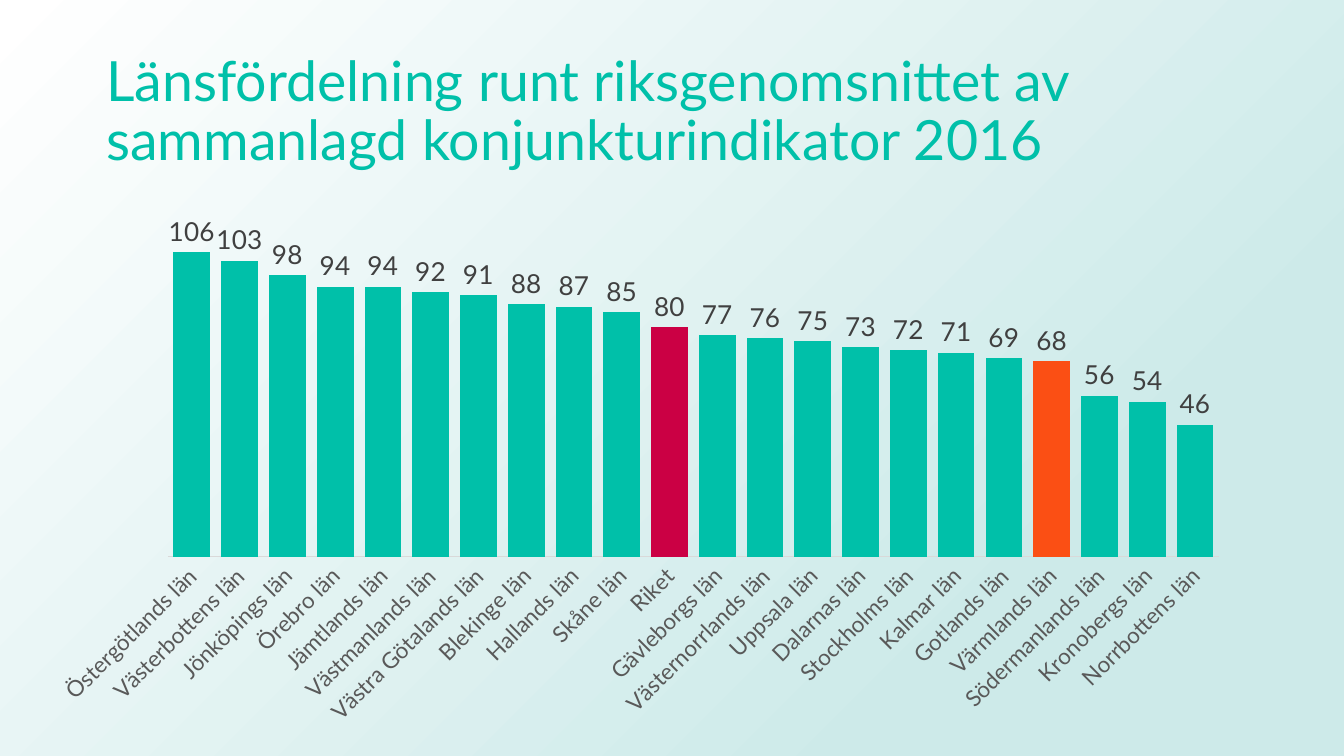
from lxml import etree
from pptx import Presentation, util as u
from pptx.chart import data as cd
from pptx.dml.color import RGBColor
from pptx.enum import chart as ch, shapes, text
from pptx.oxml import parse_xml
from pptx.oxml.ns import nsdecls, qn

SCALE = 914400 / 134.4
COLORS = {"teal": "00C0A9", "red": "CB0044", "orange": "FB4F14", "label": "404040",
          "axis": "595959", "line": "D9D9D9", "mist": "CDEAE9", "white": "FFFFFF"}
COUNTIES = [
    ("Östergötlands län", 106), ("Västerbottens län", 103), ("Jönköpings län", 98),
    ("Örebro län", 94), ("Jämtlands län", 94), ("Västmanlands län", 92),
    ("Västra Götalands län", 91), ("Blekinge län", 88), ("Hallands län", 87),
    ("Skåne län", 85), ("Riket", 80), ("Gävleborgs län", 77),
    ("Västernorrlands län", 76), ("Uppsala län", 75), ("Dalarnas län", 73),
    ("Stockholms län", 72), ("Kalmar län", 71), ("Gotlands län", 69),
    ("Värmlands län", 68), ("Södermanlands län", 56), ("Kronobergs län", 54),
    ("Norrbottens län", 46)]
HIGHLIGHTS = {"Riket": "red", "Värmlands län": "orange"}


def px(n):
    return u.Emu(round(n * SCALE))


def rgb(name):
    return RGBColor.from_string(COLORS[name])


class Deck:
    """Holds the style and the current slide, with one method per kind of element."""

    def __init__(self, width, height, font="Lato"):
        self.prs = Presentation()
        self.prs.slide_width, self.prs.slide_height = px(width), px(height)
        self.font = font
        self.s = self.prs.slides.add_slide(self.prs.slide_layouts[6])

    def set_font(self, font, size, color):
        for key, value in {"name": self.font, "size": u.Pt(size), "bold": False}.items():
            setattr(font, key, value)
        font.color.rgb = rgb(color)

    def backdrop(self, x, y, w, h, stops):
        sp = self.s.shapes.add_shape(shapes.MSO_SHAPE.RECTANGLE, px(x), px(y), px(w), px(h))
        sp.shadow.inherit = False
        sp.line.fill.background()
        sp.fill.gradient()
        grad = sp._element.spPr.find(qn("a:gradFill"))
        marks = "".join(f'<a:gs pos="{pos * 1000}"><a:srgbClr val="{COLORS[c]}"/></a:gs>'
                        for pos, c in stops)
        grad.getparent().replace(grad, parse_xml(
            f'<a:gradFill {nsdecls("a")} rotWithShape="1"><a:gsLst>{marks}</a:gsLst>'
            '<a:path path="circle"><a:fillToRect l="100000" t="100000"/></a:path></a:gradFill>'))

    def title(self, x, y, w, h, words, size, color):
        tf = self.s.shapes.add_textbox(px(x), px(y), px(w), px(h)).text_frame
        for key, value in {"word_wrap": True, "vertical_anchor": text.MSO_ANCHOR.MIDDLE}.items():
            setattr(tf, key, value)
        p = tf.paragraphs[0]
        p.line_spacing = 0.9
        r = p.add_run()
        r.text = words
        self.set_font(r.font, size, color)

    def columns(self, x, y, w, h, plot_box, rows, highlights, color):
        data = cd.CategoryChartData(number_format="0")
        data.categories = [name for name, _ in rows]
        data.add_series("Series 1", [value for _, value in rows])
        chart = self.s.shapes.add_chart(ch.XL_CHART_TYPE.COLUMN_CLUSTERED,
                                        px(x), px(y), px(w), px(h), data).chart
        chart.has_legend = chart.has_title = False
        chart.font.name, chart.font.size = "Calibri", u.Pt(10)
        self.place_plot(chart, (x, y, w, h), plot_box)

        axis = chart.category_axis
        axis.major_tick_mark = ch.XL_TICK_MARK.NONE
        axis.format.line.color.rgb = rgb("line")
        axis.format.line.width = u.Pt(0.75)
        self.set_font(axis.tick_labels.font, 12, "axis")
        axis._element.find(qn("c:txPr")).find(qn("a:bodyPr")).set("rot", "-2700000")
        for key, value in {"minimum_scale": 0, "maximum_scale": 120,
                           "has_major_gridlines": False, "visible": False}.items():
            setattr(chart.value_axis, key, value)

        plot = chart.plots[0]
        plot.gap_width, plot.vary_by_categories = 30, False
        series = plot.series[0]
        for fill, c in [(series.format.fill, color)] + [
                (series.points[i].format.fill, highlights[name])
                for i, (name, _) in enumerate(rows) if name in highlights]:
            fill.solid()
            fill.fore_color.rgb = rgb(c)
        labels = series.data_labels
        for key, value in {"show_value": True, "number_format": "0",
                           "number_format_is_linked": False,
                           "position": ch.XL_LABEL_POSITION.OUTSIDE_END}.items():
            setattr(labels, key, value)
        self.set_font(labels.font, 14, "label")

    def place_plot(self, chart, frame, box):
        area = chart._chartSpace.chart.plotArea
        for old in area.findall(qn("c:layout")):
            area.remove(old)
        layout = etree.Element(qn("c:layout"))
        manual = etree.SubElement(layout, qn("c:manualLayout"))
        x, y, w, h = frame
        left, top, width, height = box
        for tag, value in [("layoutTarget", "inner"), ("xMode", "edge"), ("yMode", "edge"),
                           ("x", (left - x) / w), ("y", (top - y) / h),
                           ("w", width / w), ("h", height / h)]:
            etree.SubElement(manual, qn(f"c:{tag}")).set("val", str(value))
        area.insert(0, layout)


def main():
    deck = Deck(1344, 756)
    deck.backdrop(0, 0, 1344, 756, [(23, "mist"), (100, "white")])
    deck.title(93, 40, 1159, 146,
               "Länsfördelning runt riksgenomsnittet av sammanlagd konjunkturindikator 2016",
               29.7, "teal")
    deck.columns(35, 202, 1208, 534, (168, 212, 1051, 345), COUNTIES, HIGHLIGHTS, "teal")
    deck.prs.save("out.pptx")


if __name__ == "__main__":
    main()
